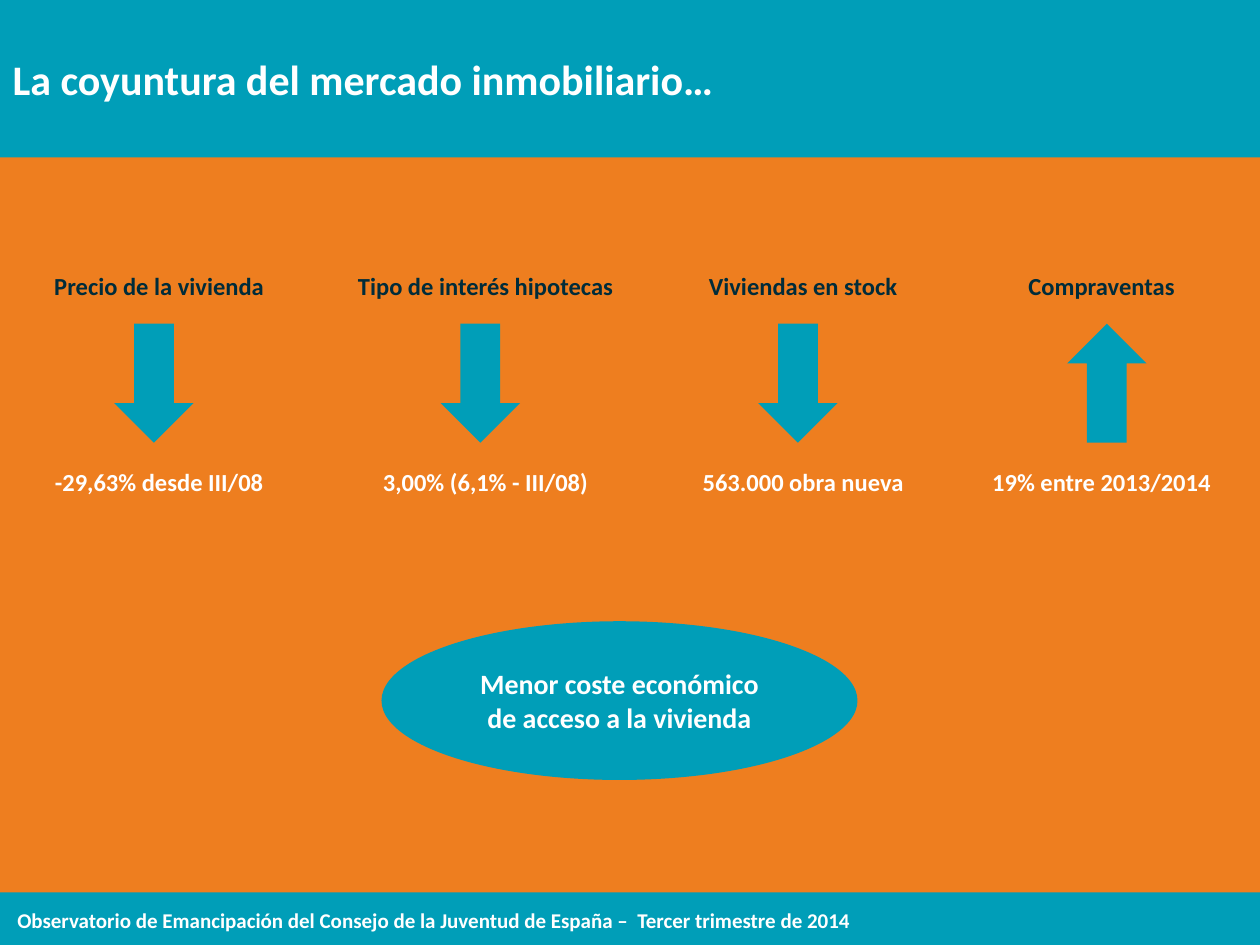
from pptx import Presentation
from pptx.dml.color import RGBColor
from pptx.enum.shapes import MSO_SHAPE
from pptx.enum.text import MSO_ANCHOR, PP_ALIGN
from pptx.util import Pt

# Content
TITLE = "La coyuntura del mercado inmobiliario…"
FOOTER = "Observatorio de Emancipación del Consejo de la Juventud de España –  Tercer trimestre de 2014"
CONCLUSION = "Menor coste económico de acceso a la vivienda"
DOWN, UP = MSO_SHAPE.DOWN_ARROW, MSO_SHAPE.UP_ARROW
# label, value, arrow, text centre, arrow offset from that centre
INDICATORS = [
    ("Precio de la vivienda", "-29,63% desde III/08", DOWN, 91, -3),
    ("Tipo de interés hipotecas", "3,00% (6,1% - III/08)", DOWN, 277.5, -3),
    ("Viviendas en stock", "563.000 obra nueva", DOWN, 459, -3),
    ("Compraventas", "19% entre 2013/2014", UP, 629.5, 3),
]

TEAL, ORANGE, WHITE, DARK = "009EB8", "EE7E1F", "FFFFFF", "002C3A"
PAGE_WIDTH, PAGE_HEIGHT = 720, 540
TEXT_WIDTH, TEXT_HEIGHT = 232.5, 24.5
ARROW_WIDTH, ARROW_HEIGHT = 45.4, 68
LABEL_TOP, ARROW_TOP, VALUE_TOP = 151.2, 185, 263
FOOTER_TOP = 510


def paint(fill, color):
    fill.solid()
    fill.fore_color.rgb = RGBColor.from_string(color)


def write(box, text, size, color=WHITE, align=PP_ALIGN.CENTER, margin=7.2):
    frame = box.text_frame
    frame.word_wrap = True
    frame.vertical_anchor = MSO_ANCHOR.MIDDLE
    frame.margin_left = frame.margin_right = Pt(margin)
    frame.margin_top = frame.margin_bottom = Pt(3.6)
    para = frame.paragraphs[0]
    para.alignment = align
    span = para.add_run()
    span.text = text
    span.font.name, span.font.size, span.font.bold = "Calibri", Pt(size), True
    span.font.color.rgb = RGBColor.from_string(color)


def add_block(page, kind, left, top, width, height):
    shape = page.shapes.add_shape(kind, Pt(left), Pt(top), Pt(width), Pt(height))
    shape.shadow.inherit = False
    paint(shape.fill, TEAL)
    shape.line.fill.background()
    return shape


def add_text(page, left, top, width, height, *args, **options):
    box = page.shapes.add_textbox(Pt(left), Pt(top), Pt(width), Pt(height))
    write(box, *args, **options)


deck = Presentation()
deck.slide_width, deck.slide_height = Pt(PAGE_WIDTH), Pt(PAGE_HEIGHT)
page = deck.slides.add_slide(deck.slide_layouts[5])
paint(page.background.fill, ORANGE)

# Title band
title = page.shapes.title
title.left, title.top, title.width, title.height = Pt(0), Pt(0), Pt(PAGE_WIDTH), Pt(90)
paint(title.fill, TEAL)
write(title, TITLE, 24, align=PP_ALIGN.LEFT)

# Footer band
add_block(page, MSO_SHAPE.RECTANGLE, 0, FOOTER_TOP, PAGE_WIDTH, PAGE_HEIGHT - FOOTER_TOP)
add_text(page, 2.8, 515, 556, 22, FOOTER, 12, align=PP_ALIGN.LEFT)

# Indicators: label, arrow, value
for label, value, arrow, center, offset in INDICATORS:
    left = center - TEXT_WIDTH / 2
    add_text(page, left, LABEL_TOP, TEXT_WIDTH, TEXT_HEIGHT, label, 14, DARK)
    add_block(page, arrow, center + offset - ARROW_WIDTH / 2, ARROW_TOP, ARROW_WIDTH, ARROW_HEIGHT)
    add_text(page, left, VALUE_TOP, TEXT_WIDTH, TEXT_HEIGHT, value, 14)

# Conclusion
ellipse = add_block(page, MSO_SHAPE.OVAL, 218, 355, 272, 90.7)
write(ellipse, CONCLUSION, 16, margin=12)

deck.save("out.pptx")
